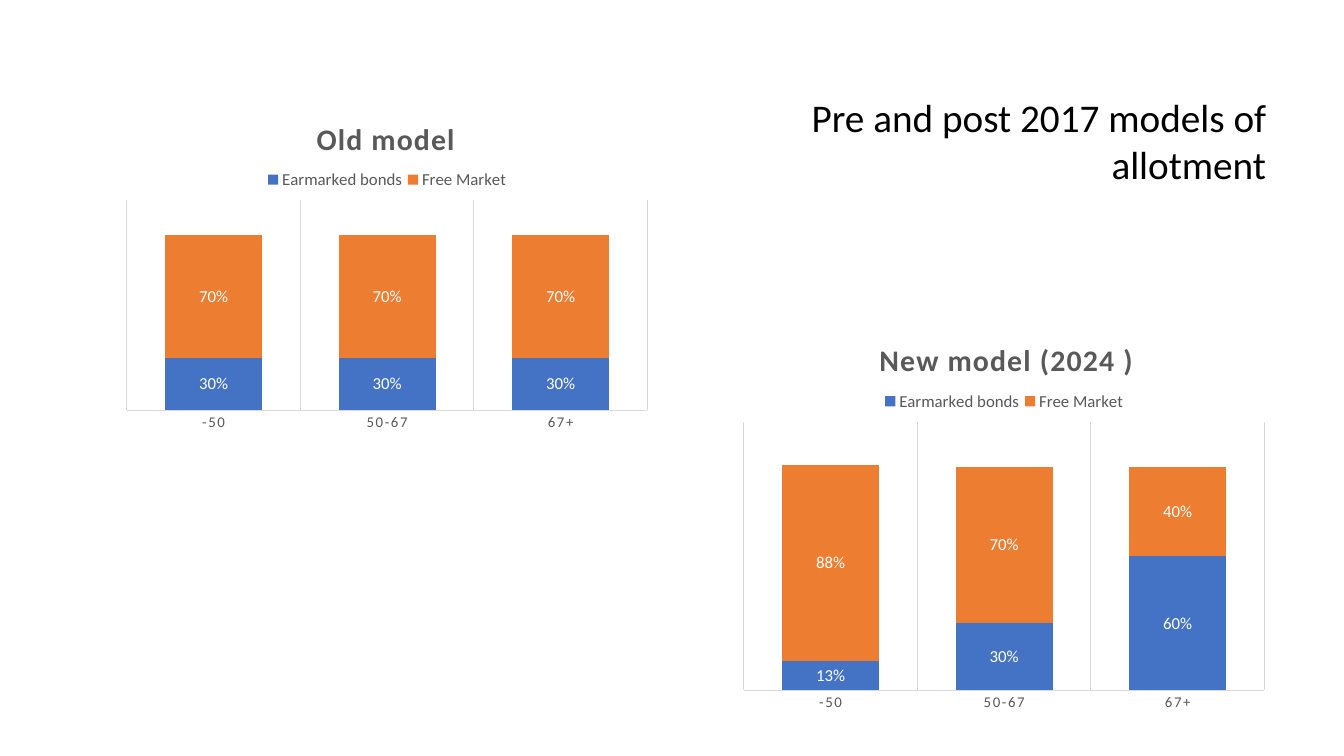
from pptx import Presentation
from pptx import util as u
from pptx.chart import data
from pptx.dml import color
from pptx.enum import chart as ch, text
from pptx.oxml import parse_xml, ns

WIDE, HIGH = 13.33, 7.5
FACE = "Calibri"
GREY, PALE = "595959", "D9D9D9"
HUES = ["4472C4", "ED7D31"]
AGES = ["-50", "50-67", "67+"]
NAMES = ["Earmarked bonds", "Free Market"]


def paint(hue):
    return color.RGBColor.from_string(hue)


def style(font, size, hue, bold=False):
    font.name = FACE
    font.size = u.Pt(size)
    font.bold = bold
    font.color.rgb = paint(hue)


def rule(line):
    line.color.rgb = paint(PALE)
    line.width = u.Pt(0.75)


def place(item, before, inner=False, **sides):
    target = '<c:layoutTarget val="inner"/>' if inner else ""
    modes = "".join(f'<c:{k}Mode val="edge"/>' for k in sides if k in "xy")
    sizes = "".join(f'<c:{k} val="{v:.3f}"/>' for k, v in sides.items())
    for old in item.findall(ns.qn("c:layout")):
        item.remove(old)
    node = parse_xml(f'<c:layout {ns.nsdecls("c")}><c:manualLayout>{target}'
                     f'{modes}{sizes}</c:manualLayout></c:layout>')
    prior = item.find(ns.qn(before)) if before else None
    item.insert(0 if prior is None else item.index(prior) + 1, node)


def add_title(chart, words, left, high):
    frame = chart.chart_title.text_frame
    frame.text = words
    run = frame.paragraphs[0].runs[0]
    style(run.font, 21.3, GREY, True)
    run._r.get_or_add_rPr().set("spc", "100")
    chart.chart_title.include_in_layout = False
    place(chart.chart_title._element, "c:tx", x=left, y=0.22 / high)


def add_axes(chart):
    ages = chart.category_axis
    ages.major_tick_mark = ch.XL_TICK_MARK.NONE
    ages.has_major_gridlines = True
    rule(ages.major_gridlines.format.line)
    rule(ages.format.line)
    style(ages.tick_labels.font, 10.6, GREY)
    for props in ages._element.xpath("c:txPr//a:defRPr"):
        props.set("spc", "120")
    share = chart.value_axis
    share.visible = False
    share.has_major_gridlines = False
    share.minimum_scale, share.maximum_scale = 0, 1.2
    share.tick_labels.number_format = "0%"
    share.tick_labels.number_format_is_linked = False


def add_bars(chart):
    plot = chart.plots[0]
    plot.gap_width, plot.overlap = 79, 100
    plot.vary_by_categories = False
    for part, hue in zip(plot.series, HUES):
        part.format.fill.solid()
        part.format.fill.fore_color.rgb = paint(hue)
        tags = part.data_labels
        tags.show_value = True
        tags.number_format = "0%"
        tags.number_format_is_linked = False
        tags.position = ch.XL_LABEL_POSITION.CENTER
        style(tags.font, 12, "FFFFFF")


def add_model(slide, words, box, left, rows):
    info = data.CategoryChartData(number_format="0%")
    info.categories = AGES
    for name, row in zip(NAMES, rows):
        info.add_series(name, row)
    kind = ch.XL_CHART_TYPE.COLUMN_STACKED
    chart = slide.shapes.add_chart(kind, *map(u.Inches, box), info).chart
    high = box[3]
    style(chart.font, 10, "000000")
    add_title(chart, words, left, high)
    add_axes(chart)
    add_bars(chart)
    chart.has_legend = True
    key = chart.legend
    key.position = ch.XL_LEGEND_POSITION.TOP
    key.include_in_layout = False
    style(key.font, 12, GREY)
    place(key._element, "c:legendPos", x=0.27, y=0.77 / high,
          w=0.46, h=0.22 / high)
    area = chart._chartSpace.chart.plotArea
    place(area, None, inner=True, x=0.02, y=1.09 / high,
          w=0.96, h=(high - 1.38) / high)


def add_head(slide, words, box):
    frame = slide.shapes.add_textbox(*map(u.Inches, box)).text_frame
    frame.word_wrap = True
    frame.auto_size = text.MSO_AUTO_SIZE.SHAPE_TO_FIT_TEXT
    line = frame.paragraphs[0]
    line.text = words
    line.alignment = text.PP_ALIGN.RIGHT
    style(line.runs[0].font, 28, "000000")


def main():
    deck = Presentation()
    deck.slide_width, deck.slide_height = u.Inches(WIDE), u.Inches(HIGH)
    slide = deck.slides.add_slide(deck.slide_layouts[6])
    add_model(slide, "Old model", (1.15, 0.9, 5.38, 3.46), 0.36,
              [[0.3, 0.3, 0.3], [0.7, 0.7, 0.7]])
    add_model(slide, "New model (2024 )", (7.27, 3.1, 5.38, 4.04), 0.26,
              [[0.13, 0.3, 0.6], [0.88, 0.7, 0.4]])
    add_head(slide, "Pre and post 2017 models of allotment",
             (WIDE / 2, 0.88, 5.99, 1.04))
    deck.save("out.pptx")


if __name__ == "__main__":
    main()
